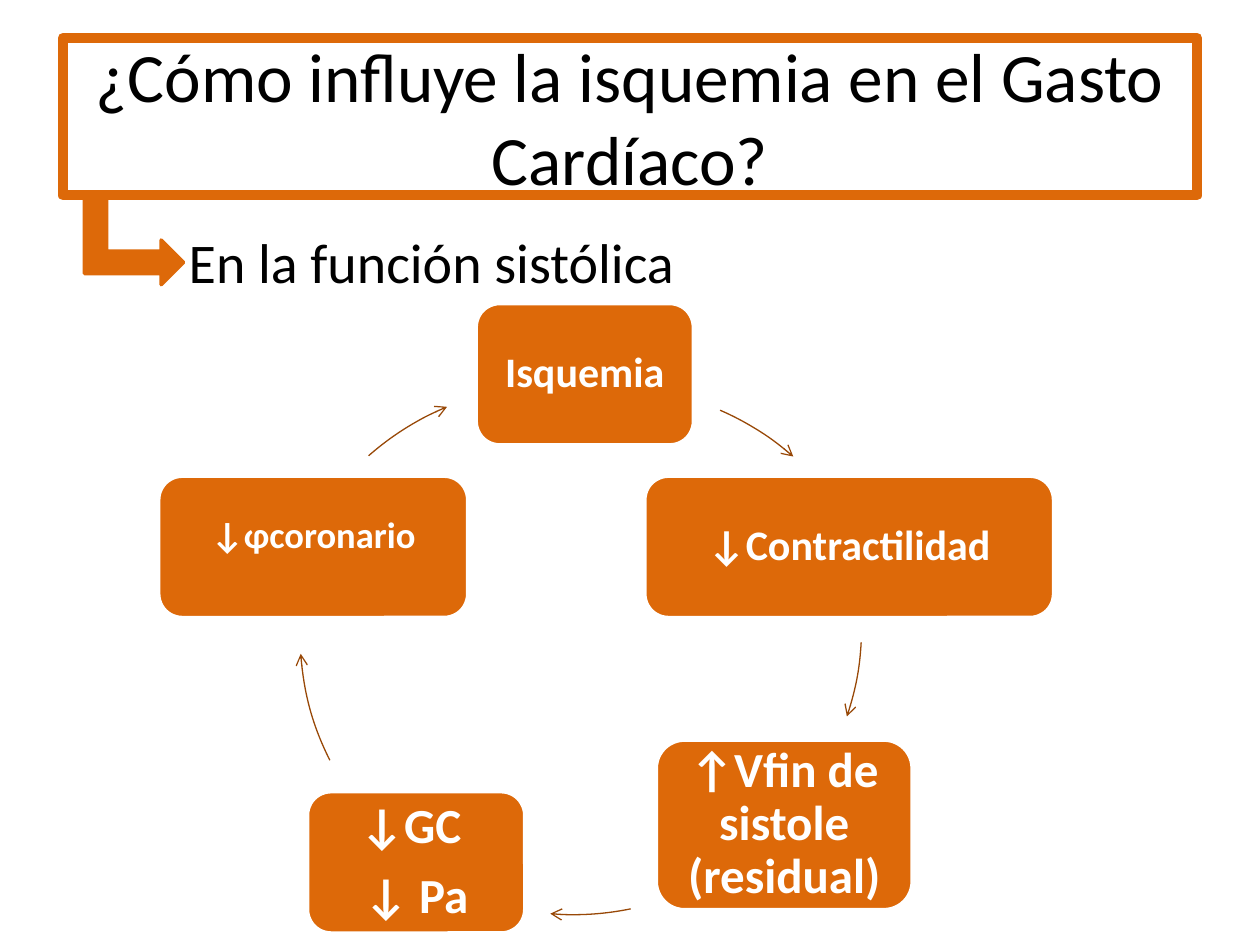
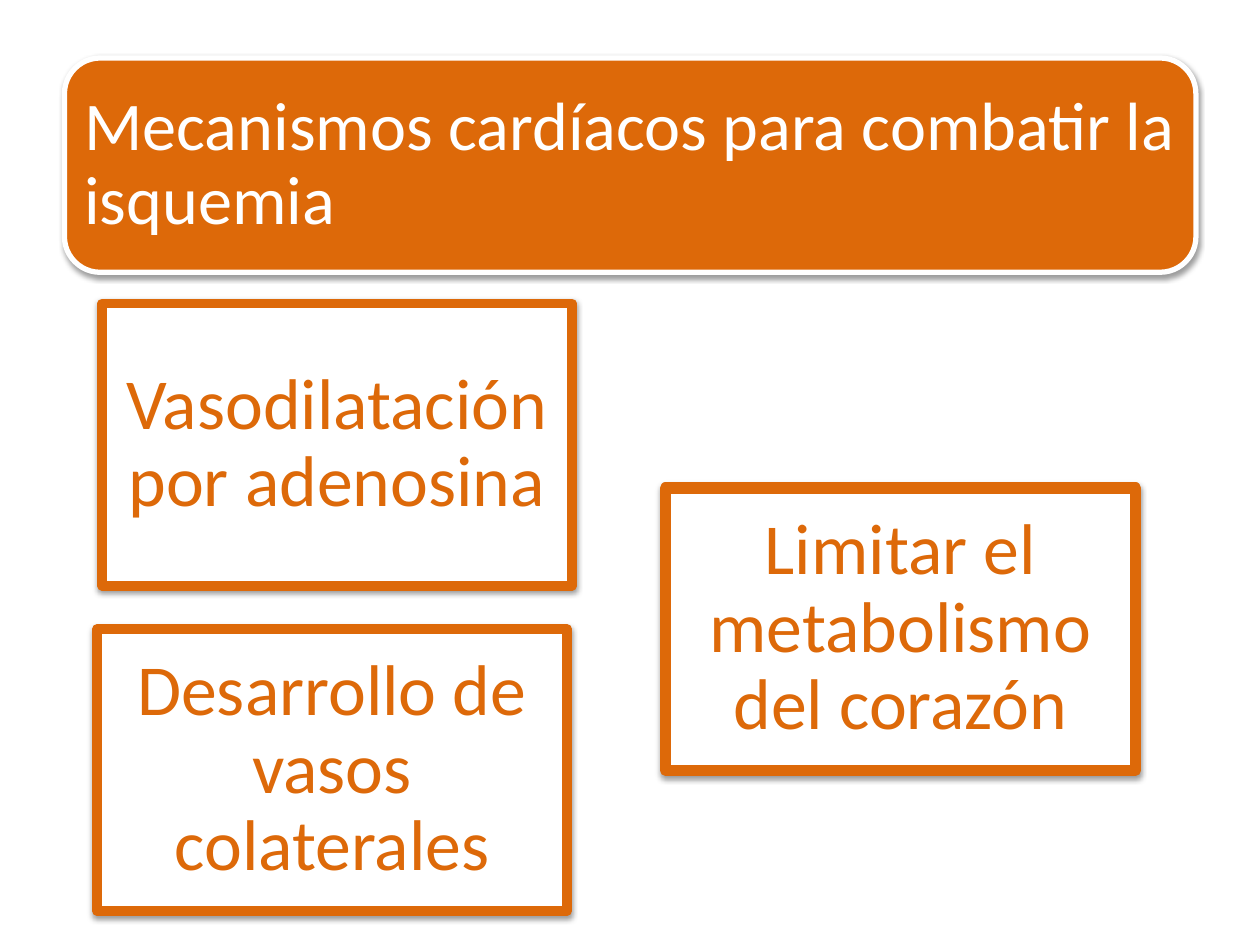
"""Build two slides on how ischemia affects the heart and how the heart responds."""
from dataclasses import dataclass

from lxml import etree
from pptx import Presentation, util as u
from pptx.dml.color import RGBColor
from pptx.enum import shapes, text
from pptx.oxml import ns


@dataclass(frozen=True)
class Theme:
    font: str = "Calibri"
    orange: str = "DD6909"
    brown: str = "984807"
    white: str = "FFFFFF"
    black: str = "000000"
    question: float = 39.6
    heading: float = 39
    subtitle: float = 32
    mechanism: float = 41


theme = Theme()
kind = shapes.MSO_SHAPE
align = text.PP_ALIGN


def paint(shape, fill, edge, width, shadow=False):
    if fill:
        shape.fill.solid()
        shape.fill.fore_color.rgb = RGBColor.from_string(fill)
    else:
        shape.fill.background()
    shape.line.color.rgb = RGBColor.from_string(edge)
    shape.line.width = u.Pt(width)
    shape.shadow.inherit = False
    if shadow:
        effects = shape._element.spPr.find(ns.qn("a:effectLst"))
        outer = etree.SubElement(effects, ns.qn("a:outerShdw"), blurRad="40000",
                                 dist="20000", dir="5400000", rotWithShape="0")
        tint = etree.SubElement(outer, ns.qn("a:srgbClr"), val=theme.black)
        etree.SubElement(tint, ns.qn("a:alpha"), val="38000")


def write(shape, words, size, color, side=align.CENTER, bold=False, inset=None, spacing=0.9):
    frame = shape.text_frame
    frame.text = words
    frame.word_wrap = True
    frame.auto_size = text.MSO_AUTO_SIZE.NONE
    frame.vertical_anchor = text.MSO_ANCHOR.MIDDLE
    if inset is not None:
        frame.margin_left = frame.margin_right = u.Cm(inset)
        frame.margin_top = frame.margin_bottom = u.Cm(inset)
    for paragraph in frame.paragraphs:
        paragraph.alignment = side
        paragraph.line_spacing = spacing
        paragraph.space_before = u.Pt(0)
        paragraph.space_after = u.Pt(10 if len(frame.paragraphs) > 1 else 0)
        for run in paragraph.runs:
            run.font.name = theme.font
            run.font.size = u.Pt(size)
            run.font.bold = bold
            run.font.color.rgb = RGBColor.from_string(color)


deck = Presentation()
deck.slide_width, deck.slide_height = u.Cm(25.4), u.Cm(19.05)

cycle = deck.slides.add_slide(deck.slide_layouts[1])
question = cycle.shapes.title
question.left, question.top, question.width, question.height = map(u.Cm, (1.27, 0.76, 22.86, 3.18))
paint(question, None, theme.orange, 5.75)
write(question, "¿Cómo influye la isquemia en el Gasto Cardíaco?", theme.question, theme.black, spacing=1)

systole = cycle.placeholders[1]
systole.left, systole.top, systole.width, systole.height = map(u.Cm, (1.27, 4.45, 22.86, 12.57))
write(systole, "En la función sistólica", theme.subtitle, theme.black, align.LEFT, spacing=1)
systole.text_frame.vertical_anchor = text.MSO_ANCHOR.TOP
indent = systole.text_frame.paragraphs[0]._p.get_or_add_pPr()
indent.set("marL", str(u.Cm(2.28)))
indent.set("indent", "0")
etree.SubElement(indent, ns.qn("a:buNone"))

pointer = cycle.shapes.add_shape(kind.BENT_UP_ARROW, *map(u.Cm, (1.8, 3.84, 1.8, 2)))
pointer.rotation = 90
paint(pointer, theme.orange, theme.orange, 2)

stages = [
    ("Isquemia", 24, (9.6, 6.12, 4.38, 2.85)),
    ("↓Contractilidad", 24, (13, 9.6, 8.24, 2.85)),
    ("↑Vfin de sistole (residual)", 28, (13.23, 14.92, 5.16, 3.42)),
    ("↓GC \n↓ Pa", 28, (6.2, 15.96, 4.38, 2.85)),
    ("↓φcoronario", 36, (3.2, 9.6, 6.23, 2.85)),
]
for words, size, box in stages:
    stage = cycle.shapes.add_shape(kind.ROUNDED_RECTANGLE, *map(u.Cm, box))
    paint(stage, theme.orange, theme.white, 2)
    write(stage, words, size, theme.white, bold=True, inset=0.13)
coronary_flow = stage.text_frame.paragraphs[0].runs[0]
coronary_flow.font._element.set("baseline", "30000")

orbit = 11.35
degree = 0.6
transitions = [
    (6.58, 7.8, 293.5, 311.2),
    (6.02, 6.96, 3.2, 18.6),
    (5.89, 7.09, 78.3, 94.75),
    (6.05, 7.11, 153.4, 176),
    (5.51, 7.77, 228.6, 247.5),
]
for left, top, start, end in transitions:
    leads_to = cycle.shapes.add_shape(kind.ARC, *map(u.Cm, (left, top, orbit, orbit)))
    leads_to.adjustments[0] = start * degree
    leads_to.adjustments[1] = end * degree
    paint(leads_to, None, theme.brown, 0.75)
    etree.SubElement(leads_to.line._get_or_add_ln(), ns.qn("a:tailEnd"), type="arrow")

defence = deck.slides.add_slide(deck.slide_layouts[5])
banner = [u.Cm(length) for length in (1.3, 1.17, 22.81, 4.32)]
panel = defence.shapes.add_shape(kind.ROUNDED_RECTANGLE, *banner)
paint(panel, theme.orange, theme.white, 3, shadow=True)
heading = defence.shapes.title
heading.left, heading.top, heading.width, heading.height = banner
write(heading, "Mecanismos cardíacos para combatir la isquemia", theme.heading, theme.white,
      align.LEFT, inset=0.4)
defence.shapes._spTree.append(heading._element)

mechanisms = [
    ("Vasodilatación por adenosina", 2.06, 6.12, 5.5),
    ("Desarrollo de vasos colaterales", 1.96, 12.68, 5.5),
    ("Limitar el metabolismo del corazón", 13.42, 9.84, 6.5),
]
for words, left, top, border in mechanisms:
    mechanism = defence.shapes.add_shape(kind.RECTANGLE, *map(u.Cm, (left, top, 9.47, 5.69)))
    paint(mechanism, theme.white, theme.orange, border, shadow=True)
    write(mechanism, words, theme.mechanism, theme.orange, inset=0.4)

deck.save("out.pptx")
